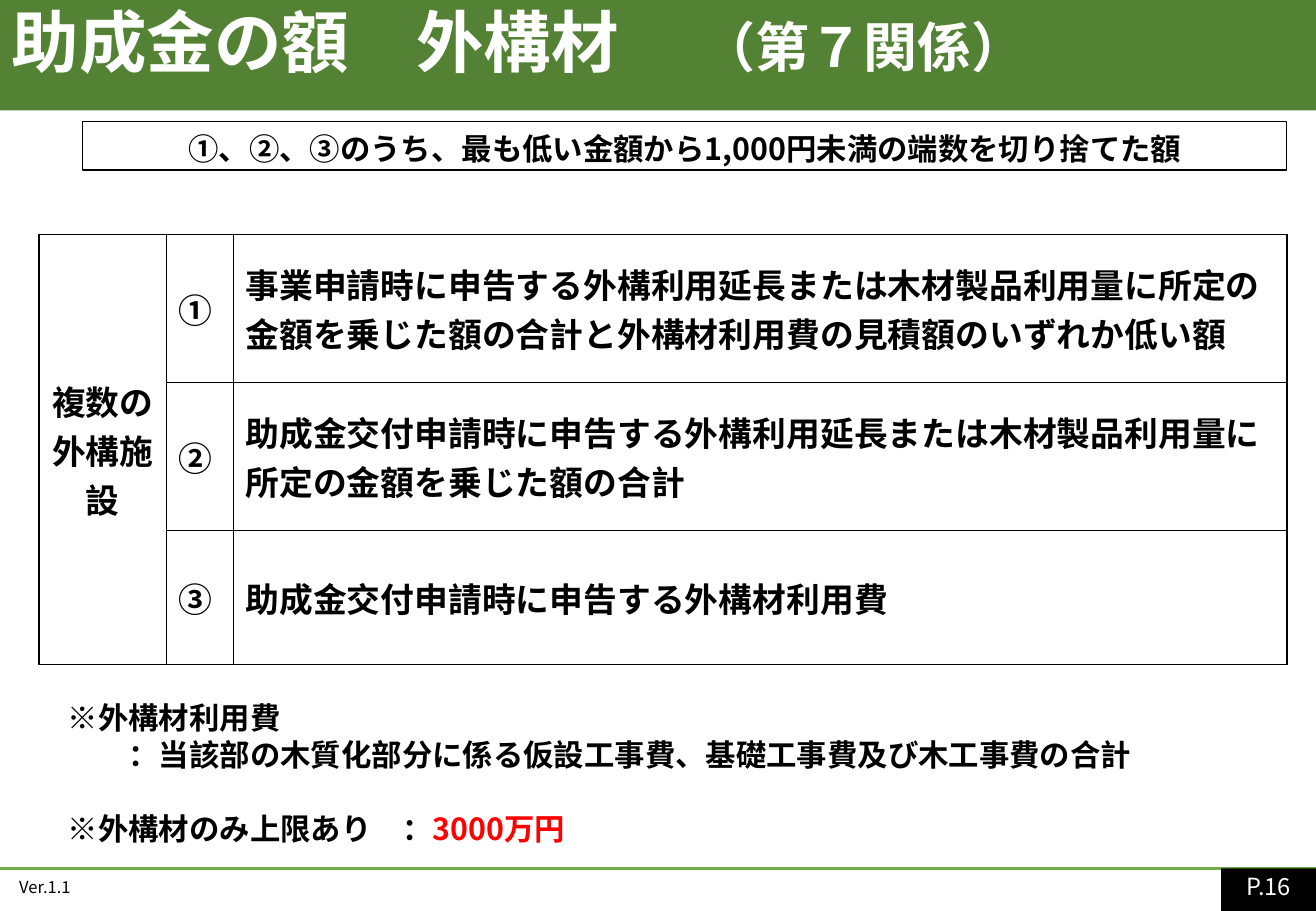
from dataclasses import dataclass

from lxml.etree import SubElement
from pptx import Presentation
from pptx.dml.color import RGBColor
from pptx.enum.shapes import MSO_CONNECTOR, MSO_SHAPE
from pptx.enum.text import MSO_ANCHOR, PP_ALIGN
from pptx.oxml import parse_xml
from pptx.oxml.ns import nsdecls, qn
from pptx.util import Emu, Pt


@dataclass(frozen=True)
class Theme:
    """Colours, type sizes and font of the deck."""

    font: str = "Noto Sans CJK JP"
    band: str = "548235"
    rule: str = "70AD47"
    black: str = "000000"
    white: str = "FFFFFF"
    alert: str = "FF0000"
    title: float = 40
    subtitle: float = 32
    table: float = 20
    body: float = 18
    page_number: float = 14
    version: float = 9.8


THEME = Theme()
WIDTH, HEIGHT = 1083, 750
CONDITIONS = [
    ("①", "事業申請時に申告する外構利用延長または木材製品利用量に所定の金額を乗じた額の合計と外構材利用費の見積額のいずれか低い額"),
    ("②", "助成金交付申請時に申告する外構利用延長または木材製品利用量に所定の金額を乗じた額の合計"),
    ("③", "助成金交付申請時に申告する外構材利用費"),
]


def px(length):
    """Turn px, a hundred to the inch, into EMU."""
    return Emu(length * 9144)


def colour(code):
    """Return the colour of a hex code."""
    return RGBColor.from_string(code)


def add_span(para, text, size, ink=THEME.black, bold=True):
    """Append one styled run to a paragraph."""
    span = para.add_run()
    span.text = text
    font = span.font
    font.name, font.size, font.bold = THEME.font, Pt(size), bold
    font.color.rgb = colour(ink)
    SubElement(font._element, qn("a:ea"), typeface=THEME.font)


def add_box(page, box, fill, line=None):
    """Add a plain rectangle."""
    shape = page.shapes.add_shape(MSO_SHAPE.RECTANGLE, *map(px, box))
    shape.shadow.inherit = False
    shape.fill.solid()
    shape.fill.fore_color.rgb = colour(fill)
    if line:
        shape.line.color.rgb = colour(line)
        shape.line.width = Pt(0.75)
    else:
        shape.line.fill.background()
    return shape


def open_frame(shape, anchor=MSO_ANCHOR.TOP, wrap=True):
    """Prepare the text frame of a shape and return it."""
    frame = shape.text_frame
    frame.word_wrap = wrap
    frame.vertical_anchor = anchor
    return frame


def start_para(para, align=PP_ALIGN.LEFT, spacing=None):
    """Set the alignment and line spacing of a paragraph."""
    para.alignment = align
    para.line_spacing = spacing
    return para


def add_footer(page, box):
    """Draw the rule, version and page number at the bottom."""
    left, top, width, height = box
    version = page.shapes.add_textbox(*map(px, (left + 6, top + 2, 64, 27)))
    para = start_para(open_frame(version, wrap=False).paragraphs[0], spacing=Pt(12))
    add_span(para, "Ver.1.1", THEME.version, bold=False)

    rule = page.shapes.add_connector(
        MSO_CONNECTOR.STRAIGHT, px(left), px(top), px(left + width), px(top))
    rule.line.color.rgb = colour(THEME.rule)
    rule.line.width = Pt(1.5)
    SubElement(rule._element.spPr, qn("a:effectLst"))

    tab_width = 78
    tab_left = left + width - tab_width
    add_box(page, (tab_left, top, tab_width, height), THEME.black)
    number = page.shapes.add_textbox(*map(px, (tab_left, top - 3, tab_width, height)))
    para = start_para(open_frame(number, MSO_ANCHOR.MIDDLE).paragraphs[0], PP_ALIGN.CENTER)
    add_span(para, "P.16", THEME.page_number, THEME.white, bold=False)


def add_title(page, box):
    """Draw the title band with its heading."""
    left, top, width, height = box
    add_box(page, box, THEME.band)
    heading = page.shapes.add_textbox(*map(px, (left, top + 3, width, height - 14)))
    para = start_para(open_frame(heading).paragraphs[0], spacing=0.9)
    add_span(para, "助成金の額　外構材　 ", THEME.title, THEME.white)
    add_span(para, "（第７関係）", THEME.subtitle, THEME.white)


def add_principle(page, box):
    """Draw the framed sentence that states the rounding."""
    frame = open_frame(add_box(page, box, THEME.white, THEME.black))
    para = start_para(frame.paragraphs[0], PP_ALIGN.CENTER, Pt(23))
    add_span(para, "①、②、③のうち、最も低い金額から1,000円未満の端数を切り捨てた額", THEME.body)


def add_notes(page, box):
    """Write the notes below the table."""
    frame = open_frame(add_box(page, box, THEME.white))
    notes = [
        (0, 0, [("※外構材利用費", THEME.black)]),
        (50, 0, [("：当該部の木質化部分に係る仮設工事費、基礎工事費及び木工事費の合計", THEME.black)]),
        (0, 22, [("※外構材のみ上限あり　：", THEME.black), ("3000万円", THEME.alert)]),
    ]
    for index, (indent, gap, spans) in enumerate(notes):
        para = frame.add_paragraph() if index else frame.paragraphs[0]
        start_para(para, spacing=Pt(22)).space_before = Pt(gap)
        para._p.get_or_add_pPr().set("marL", str(px(indent)))
        for text, ink in spans:
            add_span(para, text, THEME.body, ink)


def style_cell(cell):
    """Clear the fill of a cell and draw its borders."""
    cell.vertical_anchor = MSO_ANCHOR.MIDDLE
    cell.fill.background()
    properties = cell._tc.get_or_add_tcPr()
    for index, side in enumerate(("lnL", "lnR", "lnT", "lnB")):
        properties.insert(index, parse_xml(
            f'<a:{side} {nsdecls("a")} w="{Pt(1)}"><a:solidFill>'
            f'<a:srgbClr val="{THEME.black}"/></a:solidFill></a:{side}>'))


def add_conditions(page, box):
    """Draw the table of the three amounts."""
    table = page.shapes.add_table(len(CONDITIONS), 3, *map(px, box)).table
    table.first_row = table.horz_banding = False
    for column, width in zip(table.columns, (105, 55, box[2] - 160)):
        column.width = px(width)
    for row, height in zip(table.rows, (122, 122, box[3] - 244)):
        row.height = px(height)
    for cell in table.iter_cells():
        style_cell(cell)
    facility = table.cell(0, 0)
    facility.merge(table.cell(len(CONDITIONS) - 1, 0))
    para = start_para(facility.text_frame.paragraphs[0], PP_ALIGN.CENTER)
    add_span(para, "複数の外構施設", THEME.table)
    for row, texts in enumerate(CONDITIONS):
        for column, text in enumerate(texts, start=1):
            para = start_para(table.cell(row, column).text_frame.paragraphs[0])
            add_span(para, text, THEME.table)


def add_grant_page(deck):
    """Add the page on the grant for exterior timber."""
    page = deck.slides.add_slide(deck.slide_layouts[6])
    add_footer(page, (0, 715, WIDTH, HEIGHT - 715))
    add_title(page, (0, 0, WIDTH, 91))
    add_notes(page, (46, 570, 991, 131))
    add_principle(page, (68, 100, 991, 40))
    add_conditions(page, (32, 193, 1027, 354))


def main():
    """Build and save the deck."""
    deck = Presentation()
    deck.slide_width, deck.slide_height = px(WIDTH), px(HEIGHT)
    add_grant_page(deck)
    deck.save("out.pptx")


if __name__ == "__main__":
    main()
